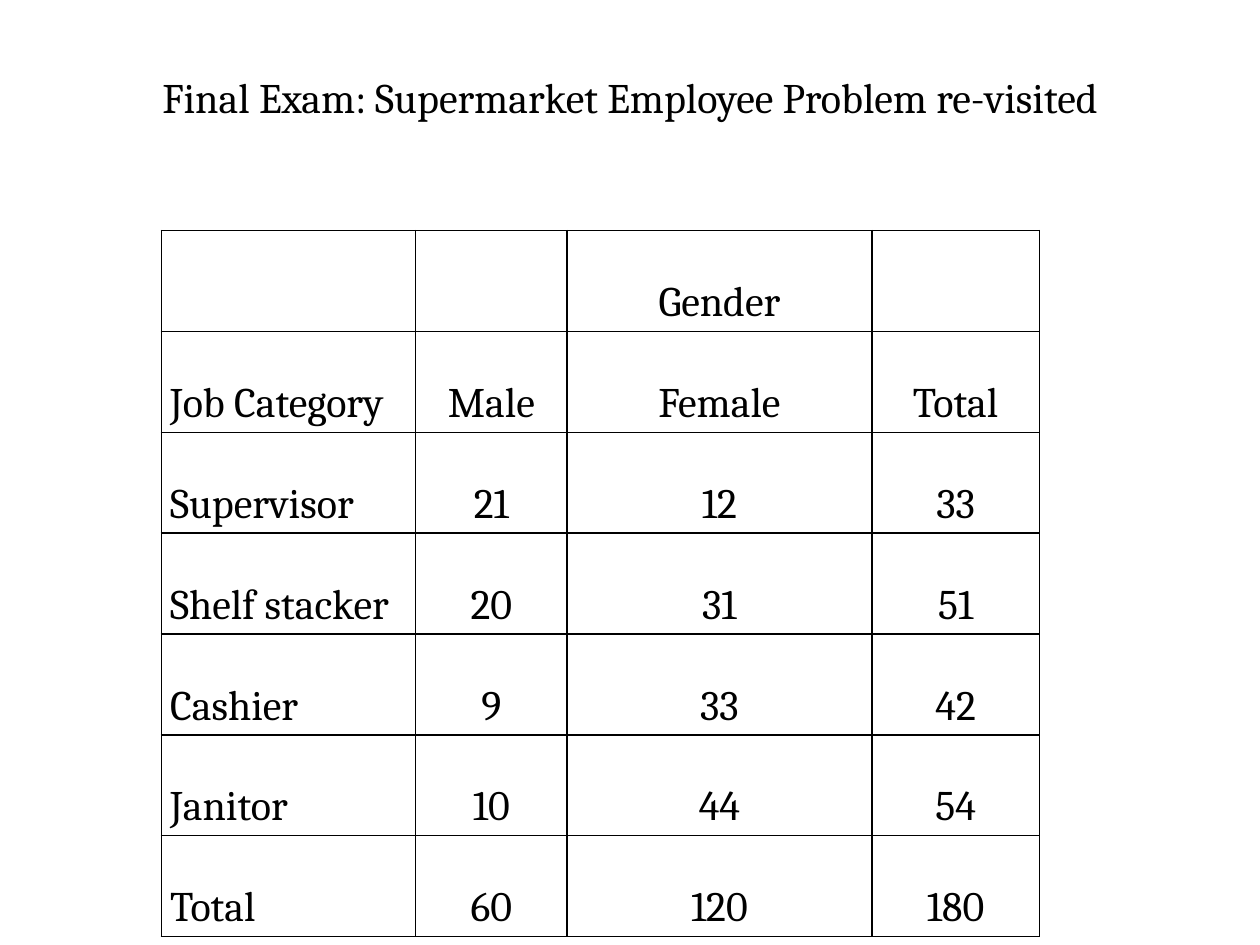
from lxml.etree import SubElement
from pptx import Presentation
from pptx.dml.color import RGBColor as RGB
from pptx.enum.text import MSO_ANCHOR as Anchor, PP_ALIGN as Align
from pptx.oxml.ns import qn
from pptx.util import Inches, Pt

COLORS = {"ink": "000000", "paper": "FFFFFF"}
FONT = "Cambria"
WIDTHS = [2.02, 1.2, 2.42, 1.33]
HEIGHT = 0.6
ROWS = [
    ["", "", "Gender", ""],
    ["Job Category", "Male", "Female", "Total"],
    ["Supervisor", "21", "12", "33"],
    ["Shelf stacker", "20", "31", "51"],
    ["Cashier", "9", "33", "42"],
    ["Janitor", "10", "44", "54"],
    ["Total", "60", "120", "180"],
]


def put_text(frame, text, size=24, align=Align.CENTER, spacing=1.0):
    para = frame.paragraphs[0]
    para.alignment = align
    para.line_spacing = spacing
    run = para.add_run()
    run.text = text
    run.font.name = FONT
    run.font.size = Pt(size)
    run.font.color.rgb = RGB.from_string(COLORS["ink"])


def add_title(slide, text):
    box = slide.shapes.add_textbox(
        Inches(0.6), Inches(-0.44), Inches(8.8), Inches(1.46))
    frame = box.text_frame
    frame.word_wrap = True
    frame.vertical_anchor = Anchor.BOTTOM
    put_text(frame, text)


def set_border(cell, width=1):
    props = cell._tc.get_or_add_tcPr()
    for side in ("lnL", "lnR", "lnT", "lnB"):
        line = SubElement(props, qn(f"a:{side}"), w=str(Pt(width)))
        fill = SubElement(line, qn("a:solidFill"))
        SubElement(fill, qn("a:srgbClr"), val=COLORS["ink"])


def add_grid(slide, rows):
    table = slide.shapes.add_table(
        len(rows), len(WIDTHS), Inches(1.28), Inches(1.83),
        Inches(sum(WIDTHS)), Inches(HEIGHT * len(rows))).table
    table.first_row = table.horz_banding = False
    for col, width in zip(table.columns, WIDTHS):
        col.width = Inches(width)
    for r, row in enumerate(rows):
        table.rows[r].height = Inches(HEIGHT)
        for c, text in enumerate(row):
            cell = table.cell(r, c)
            cell.margin_left = cell.margin_right = Inches(0.07)
            cell.margin_top = cell.margin_bottom = 0
            set_border(cell)
            cell.fill.solid()
            cell.fill.fore_color.rgb = RGB.from_string(COLORS["paper"])
            if text:
                align = Align.CENTER if c else Align.LEFT
                put_text(cell.text_frame, text, align=align, spacing=2.0)


def main():
    deck = Presentation()
    deck.slide_width, deck.slide_height = Inches(10), Inches(7.5)
    slide = deck.slides.add_slide(deck.slide_layouts[6])
    add_title(slide, "Final Exam: Supermarket Employee Problem re-visited")
    add_grid(slide, ROWS)
    deck.save("out.pptx")


if __name__ == "__main__":
    main()
